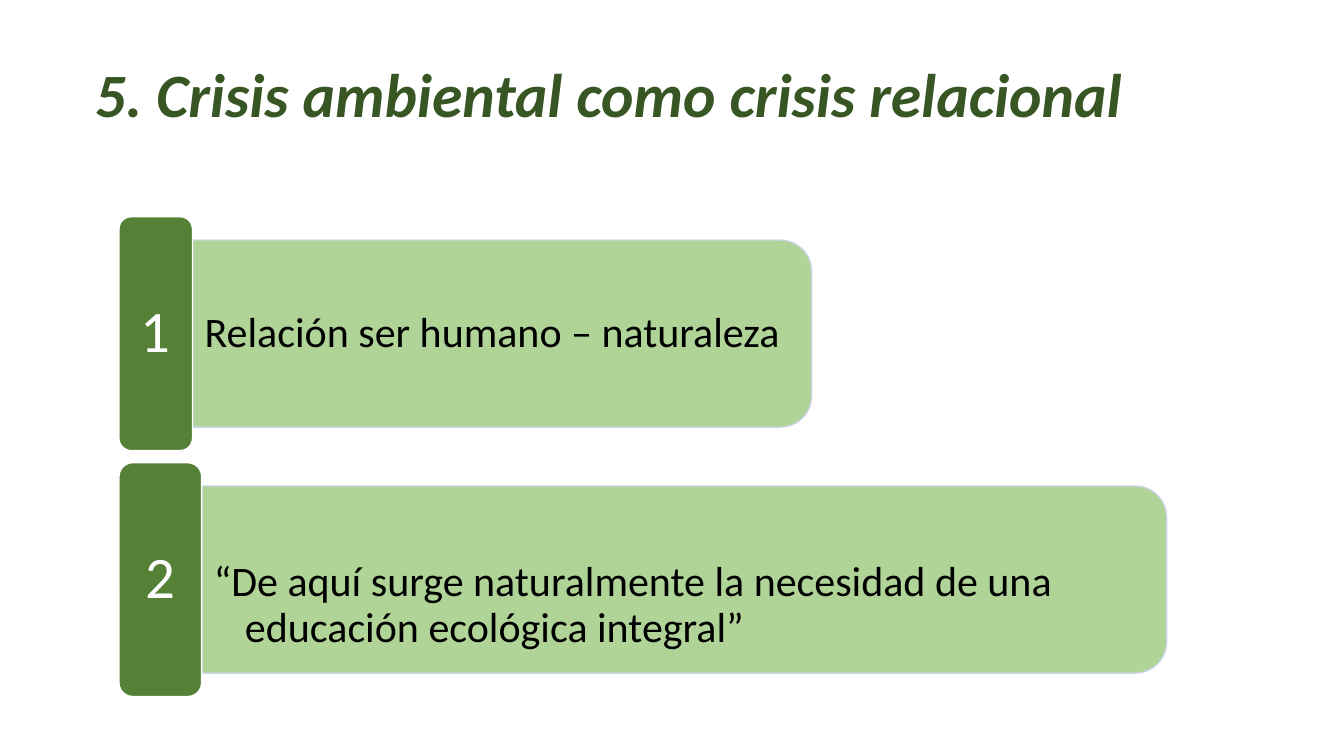
from lxml import etree
from pptx import Presentation, util as u
from pptx.dml.color import RGBColor
from pptx.enum import shapes, text
from pptx.oxml.ns import qn

# Content
TITLE = "5. Crisis ambiental como crisis relacional"
ROWS = [  # number, statement, tab width, panel width, downward text shift
    ("1", "Relación ser humano – naturaleza", 0.73, 6.14, 0),
    ("2", "“De aquí surge naturalmente la necesidad de una educación ecológica integral”",
     0.82, 9.57, 0.26),
]
COLORS = {"title": "385623", "tab": "548135", "panel": "A8D08C",
          "edge": "CCD3EA", "white": "FFFFFF", "black": "000000"}

# Row grid, in inches
LEFT, TOP = 1.18, 2.15
ROW_HEIGHT, ROW_GAP = 2.32, 0.12
PANEL_HEIGHT = 0.8 * ROW_HEIGHT
TEXT_HEIGHT = 1.68
HANGING = 0.31
OPACITY = 90


def color(name):
    return RGBColor.from_string(COLORS[name])


def write(shape, words, size, fill, bold=False, italic=False, hanging=0,
          align=text.PP_ALIGN.LEFT, anchor=text.MSO_ANCHOR.MIDDLE, insets=(0, 0, 0, 0)):
    frame = shape.text_frame
    frame.word_wrap = True
    frame.auto_size = text.MSO_AUTO_SIZE.NONE
    frame.vertical_anchor = anchor
    (frame.margin_left, frame.margin_top,
     frame.margin_right, frame.margin_bottom) = map(u.Inches, insets)
    paragraph = frame.paragraphs[0]
    paragraph.alignment = align
    paragraph.line_spacing = 0.9
    if hanging:
        properties = paragraph._p.get_or_add_pPr()
        properties.set("marL", str(u.Inches(hanging)))
        properties.set("indent", str(-u.Inches(hanging)))
    run = paragraph.add_run()
    run.text = words
    run.font.name = "Calibri"
    run.font.size = u.Pt(size)
    run.font.bold, run.font.italic = bold, italic
    run.font.color.rgb = color(fill)


def add_block(slide, kind, left, top, width, height, fill, edge, adjustments):
    shape = slide.shapes.add_shape(kind, *map(u.Inches, (left, top, width, height)))
    shape.shadow.inherit = False
    shape.fill.solid()
    shape.fill.fore_color.rgb = color(fill)
    shape.line.color.rgb = color(edge)
    shape.line.width = u.Pt(1)
    for index, value in enumerate(adjustments):
        shape.adjustments[index] = value
    return shape


def add_row(slide, top, number, statement, tab_width, panel_width, shift):
    middle = top + ROW_HEIGHT / 2
    panel_left = LEFT + tab_width

    # Panel: a quarter turn puts the rounded corners on the right
    panel = add_block(slide, shapes.MSO_SHAPE.ROUND_2_SAME_RECTANGLE,
                      panel_left + (panel_width - PANEL_HEIGHT) / 2, middle - panel_width / 2,
                      PANEL_HEIGHT, panel_width, "panel", "edge", (0.167, 0))
    panel.rotation = 90
    for tint in panel._element.spPr.iter(qn("a:srgbClr")):
        etree.SubElement(tint, qn("a:alpha"), val=str(OPACITY * 1000))

    # Statement
    box = slide.shapes.add_textbox(*map(u.Inches, (
        panel_left, middle - TEXT_HEIGHT / 2, panel_width - 0.09, TEXT_HEIGHT)))
    write(box, statement, 30, "black", hanging=HANGING,
          insets=(0.12, 0.06 + 2 * shift, 0.12, 0.06))

    # Numbered tab
    tab = add_block(slide, shapes.MSO_SHAPE.ROUNDED_RECTANGLE, LEFT, top,
                    tab_width, ROW_HEIGHT, "tab", "white", (0.167,))
    write(tab, number, 42, "white", align=text.PP_ALIGN.CENTER)


def main():
    presentation = Presentation()
    presentation.slide_width, presentation.slide_height = u.Inches(13.33), u.Inches(7.5)
    slide = presentation.slides.add_slide(presentation.slide_layouts[5])

    # Title
    title = slide.shapes.title
    title.left, title.top, title.width, title.height = map(u.Inches, (0.84, 0.59, 11.5, 1.45))
    write(title, TITLE, 44, "title", bold=True, italic=True,
          anchor=text.MSO_ANCHOR.TOP, insets=(0.1, 0.05, 0.1, 0.05))

    # Numbered rows
    for index, row in enumerate(ROWS):
        add_row(slide, TOP + index * (ROW_HEIGHT + ROW_GAP), *row)

    presentation.save("out.pptx")


if __name__ == "__main__":
    main()
